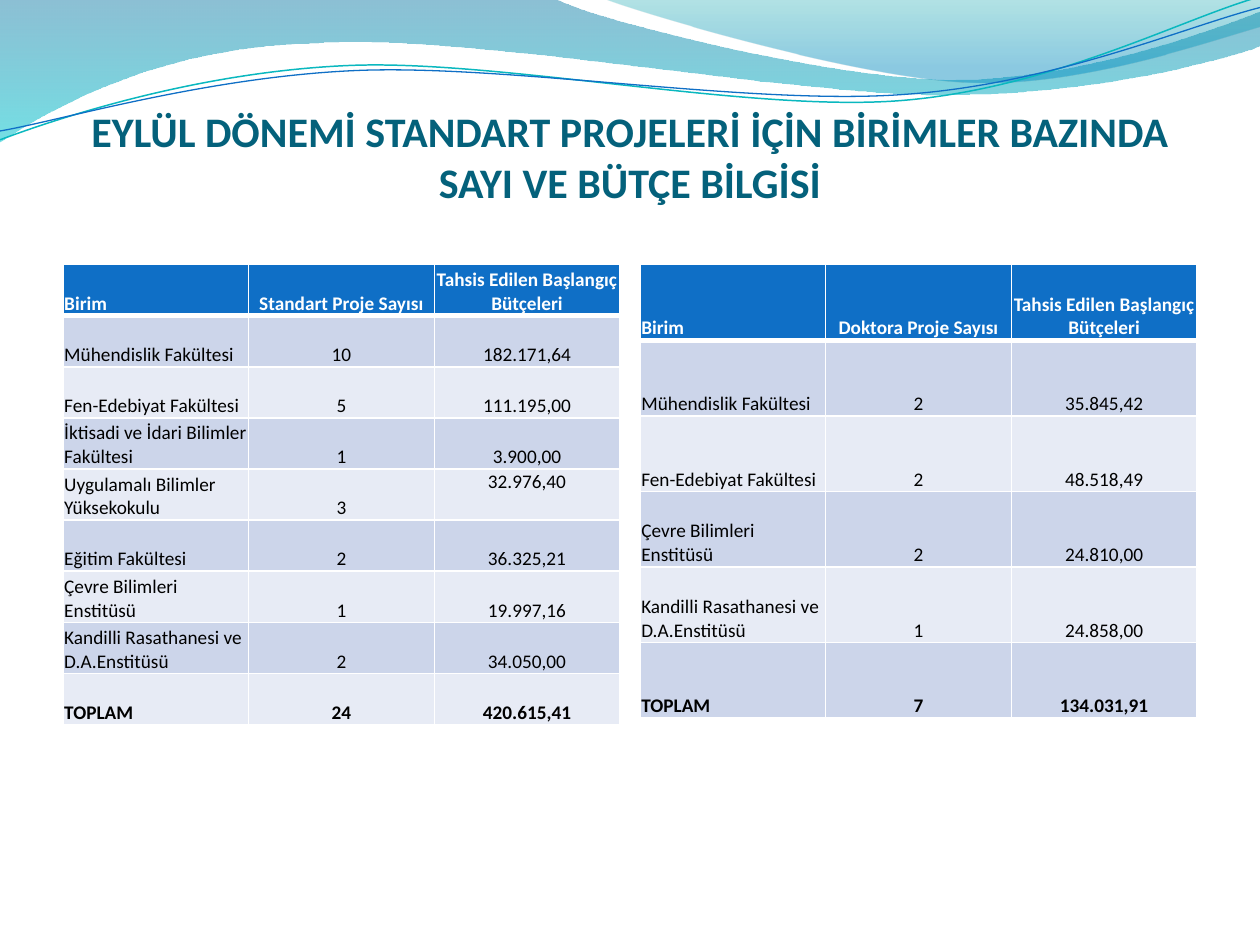
import math

import pptx
import pptx.dml.color
import pptx.enum.text
import pptx.oxml
import pptx.oxml.ns
import pptx.util
from pptx.util import Inches

ANCHOR = pptx.enum.text.MSO_ANCHOR
ALIGN = pptx.enum.text.PP_ALIGN
qn = pptx.oxml.ns.qn
NAMESPACE = pptx.oxml.ns.nsdecls("a")
BLUE, WHITE, BLACK = "0F6FC6", "FFFFFF", "000000"
BANDS = ("CCD5EA", "E7EBF5")


def color(hex_text):
    return pptx.dml.color.RGBColor.from_string(hex_text)


def write_text(text_frame, text, size=11, font="Calibri", fill=BLACK,
               bold=False, align=ALIGN.LEFT):
    paragraph = text_frame.paragraphs[0]
    paragraph.alignment = align
    run = paragraph.add_run()
    run.text = text
    run.font.size = pptx.util.Pt(size)
    run.font.name = font
    run.font.bold = bold
    run.font.color.rgb = color(fill)


def turn(point, center, degrees):
    """Turn a point clockwise on the slide around a center."""
    cosine = math.cos(math.radians(degrees))
    sine = math.sin(math.radians(degrees))
    x, y = point[0] - center[0], point[1] - center[1]
    return (center[0] + x * cosine - y * sine,
            center[1] + x * sine + y * cosine)


class SlideBuilder:
    def __init__(self, slide):
        self.slide = slide

    def outline(self, start, segments, close):
        """Each segment lists one point (straight) or three (cubic)."""
        def to_emu(point):
            return Inches(point[0]), Inches(point[1])

        builder = self.slide.shapes.build_freeform(*to_emu(start), scale=1)
        builder.add_line_segments(
            [to_emu(segment[-1]) for segment in segments], close=close)
        shape = builder.convert_to_shape()
        shape.shadow.inherit = False
        lines = list(shape.element.iter(qn("a:lnTo")))
        for line, segment in zip(lines, segments):
            if len(segment) == 3:
                points = "".join(
                    f'<a:pt x="{x - shape.left}" y="{y - shape.top}"/>'
                    for x, y in map(to_emu, segment))
                line.getparent().replace(line, pptx.oxml.parse_xml(
                    f'<a:cubicBezTo {NAMESPACE}>{points}</a:cubicBezTo>'))
        return shape

    def wave(self, start, segments, stops):
        """Filled wave; stops are (position, colour, opacity in percent)."""
        shape = self.outline(start, segments, close=True)
        shape.line.fill.background()
        shape.fill.gradient()
        shape.fill.gradient_angle = 270
        for stop, (position, hex_text, _) in zip(
                shape.fill.gradient_stops, stops):
            stop.position = position
            stop.color.rgb = color(hex_text)
        color_elements = list(shape.element.spPr.iter(qn("a:srgbClr")))
        for element, (_, _, opacity) in zip(color_elements, stops):
            element.append(pptx.oxml.parse_xml(
                f'<a:alpha {NAMESPACE} val="{opacity * 1000}"/>'))

    def curve(self, start, segments, hex_text, width, center, tilt=2.7):
        """Line drawn level, then tilted counterclockwise into place."""
        level = [[turn(point, center, tilt) for point in segment]
                 for segment in segments]
        shape = self.outline(turn(start, center, tilt), level, close=False)
        shape.rotation = -tilt
        shape.fill.background()
        shape.line.color.rgb = color(hex_text)
        shape.line.width = pptx.util.Pt(width)

    def title(self, text, left, top, width, height):
        box = self.slide.shapes.add_textbox(
            Inches(left), Inches(top), Inches(width), Inches(height))
        frame = box.text_frame
        frame.word_wrap = True
        frame.vertical_anchor = ANCHOR.BOTTOM
        frame.margin_left = frame.margin_right = frame.margin_bottom = 0
        frame.margin_top = Inches(0.05)
        write_text(frame, text, size=24, fill="04617B", bold=True,
                   align=ALIGN.CENTER)

    def cell_borders(self, cell, **widths):
        properties = cell._tc.get_or_add_tcPr()
        for index, side in enumerate("LRTB"):
            width = pptx.util.Pt(widths.get(side, 1))
            properties.insert(index, pptx.oxml.parse_xml(
                f'<a:ln{side} {NAMESPACE} w="{width}">'
                f'<a:solidFill><a:srgbClr val="{WHITE}"/></a:solidFill>'
                f'</a:ln{side}>'))

    def table(self, rows, left, top, width, height, top_cells=()):
        table = self.slide.shapes.add_table(
            len(rows), len(rows[0]), Inches(left), Inches(top),
            Inches(width), Inches(height)).table
        table.horz_banding = False
        for row_index, row in enumerate(rows):
            header = row_index == 0
            total = row_index == len(rows) - 1
            for column_index, text in enumerate(row):
                cell = table.cell(row_index, column_index)
                cell.margin_left = cell.margin_right = Inches(0.01)
                cell.margin_top, cell.margin_bottom = Inches(0.01), 0
                raised = (row_index, column_index) in top_cells
                cell.vertical_anchor = ANCHOR.TOP if raised else ANCHOR.BOTTOM
                cell.fill.solid()
                cell.fill.fore_color.rgb = color(
                    BLUE if header else BANDS[(row_index - 1) % 2])
                self.cell_borders(cell, B=3 if header else 1,
                                  T=3 if row_index == 1 else 1)
                write_text(cell.text_frame, text,
                           fill=WHITE if header else BLACK,
                           bold=header or total,
                           align=ALIGN.CENTER if column_index else ALIGN.LEFT)


def main():
    presentation = pptx.Presentation()
    presentation.slide_width = Inches(10)
    presentation.slide_height = Inches(7.5)
    slide = presentation.slides.add_slide(presentation.slide_layouts[6])
    builder = SlideBuilder(slide)

    # Waves along the top edge
    builder.wave(
        (0, 0),
        [[(4.4, -0.01)], [(4.76, 0.17), (6.64, 0.63), (7.58, 0.63)],
         [(8.53, 0.63), (9.58, 0.26), (10, 0.09)], [(10.01, 0.36)],
         [(9.83, 0.44), (8.7, 0.76), (7.46, 0.75)],
         [(6.22, 0.75), (3.82, 0.28), (2.57, 0.34)],
         [(1.29, 0.36), (0.46, 0.83), (-0.01, 1.13)], [(0, 0)]],
        [(0, "0074A1", 45), (1, "00C6CF", 55)])
    builder.wave(
        (4.79, -0.01),
        [[(5.09, 0.11), (6.82, 0.62), (7.69, 0.65)],
         [(8.56, 0.69), (9.61, 0.32), (10, 0.21)], [(10, 0)],
         [(4.79, -0.01)]],
        [(0, "00A1A9", 30), (0.8, "008BBF", 45)])
    builder.curve(
        (0, 1.11),
        [[(0.48, 0.93), (1.58, 0.57), (2.77, 0.52)],
         [(3.95, 0.47), (5.93, 0.89), (7.13, 0.8)],
         [(8.33, 0.71), (9.38, 0.15), (9.98, -0.02)]],
        "0AB8BF", 0.85, center=(4.99, 0.57))
    builder.curve(
        (0, 1.04),
        [[(0.47, 0.96), (1.64, 0.61), (2.83, 0.56)],
         [(4.03, 0.51), (5.97, 0.84), (7.17, 0.75)],
         [(8.36, 0.67), (9.41, 0.21), (10, 0.06)]],
        BLUE, 0.75, center=(5, 0.59))

    # Title
    builder.title("EYLÜL DÖNEMİ STANDART PROJELERİ İÇİN BİRİMLER BAZINDA "
                  "SAYI VE BÜTÇE BİLGİSİ", 0.5, 0.77, 9, 0.87)

    # Standard projects
    budget = "Tahsis Edilen Başlangıç Bütçeleri"
    builder.table([
        ("Birim", "Standart Proje Sayısı", budget),
        ("Mühendislik Fakültesi", "10", "182.171,64"),
        ("Fen-Edebiyat Fakültesi", "5", "111.195,00"),
        ("İktisadi ve İdari Bilimler Fakültesi", "1", "3.900,00"),
        ("Uygulamalı Bilimler Yüksekokulu", "3", "32.976,40"),
        ("Eğitim Fakültesi", "2", "36.325,21"),
        ("Çevre Bilimleri Enstitüsü", "1", "19.997,16"),
        ("Kandilli Rasathanesi ve D.A.Enstitüsü", "2", "34.050,00"),
        ("TOPLAM", "24", "420.615,41"),
    ], 0.5, 2.1, 4.42, 3.65, top_cells=[(4, 2)])

    # Doctoral projects
    builder.table([
        ("Birim", "Doktora Proje Sayısı", budget),
        ("Mühendislik Fakültesi", "2", "35.845,42"),
        ("Fen-Edebiyat Fakültesi", "2", "48.518,49"),
        ("Çevre Bilimleri Enstitüsü", "2", "24.810,00"),
        ("Kandilli Rasathanesi ve D.A.Enstitüsü", "1", "24.858,00"),
        ("TOPLAM", "7", "134.031,91"),
    ], 5.08, 2.1, 4.42, 3.6)

    presentation.save("out.pptx")


if __name__ == "__main__":
    main()
